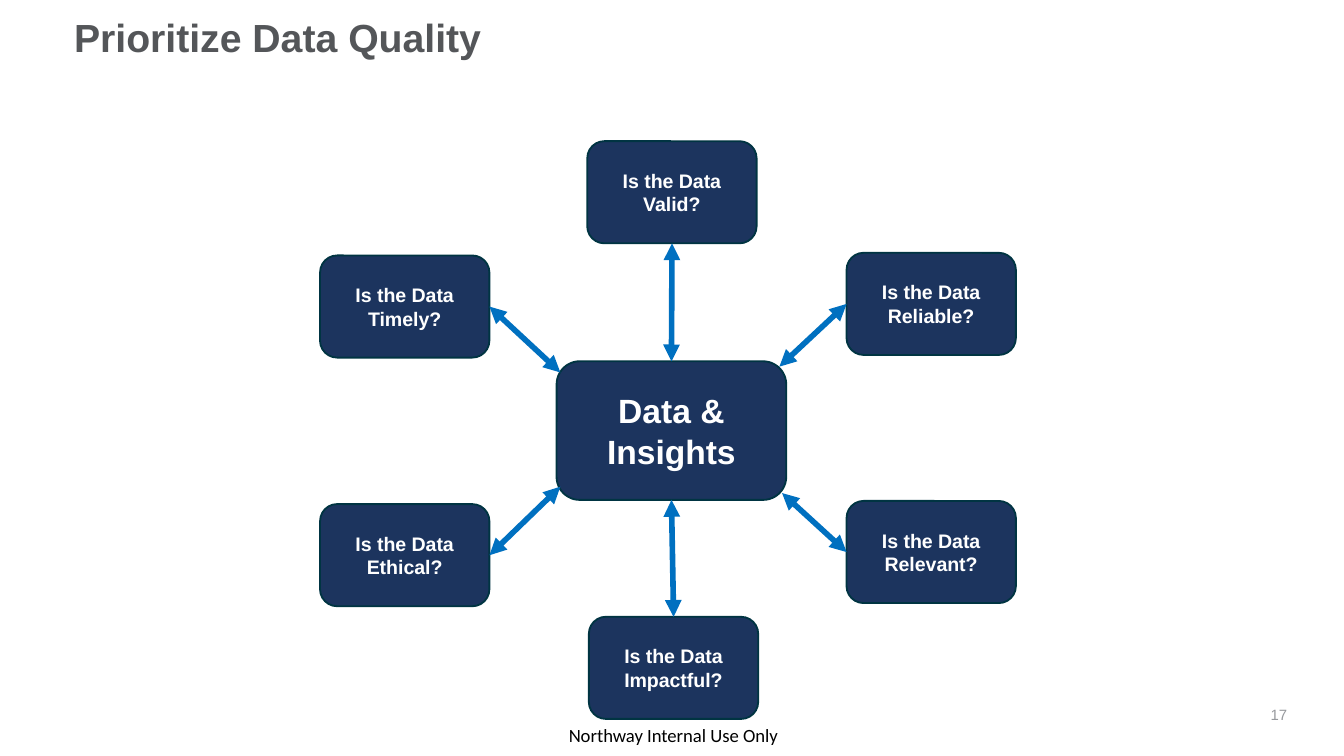
from lxml import etree
from pptx import Presentation
from pptx.dml.color import RGBColor
from pptx.enum.shapes import MSO_CONNECTOR, MSO_SHAPE
from pptx.enum.text import MSO_ANCHOR, PP_ALIGN
from pptx.oxml.ns import qn
from pptx.util import Cm, Pt

ROUNDED, STRAIGHT = MSO_SHAPE.ROUNDED_RECTANGLE, MSO_CONNECTOR.STRAIGHT
TOP, MIDDLE = MSO_ANCHOR.TOP, MSO_ANCHOR.MIDDLE
LEFT, CENTER, RIGHT = PP_ALIGN.LEFT, PP_ALIGN.CENTER, PP_ALIGN.RIGHT
TOP_SIDE, LEFT_SIDE, BOTTOM_SIDE, RIGHT_SIDE = range(4)

# Content: all lengths in cm
NAVY, EDGE, ARROW, WHITE = "1C345E", "003442", "0070C0", "FFFFFF"
HUB = ("Data & Insights", (10.52, 6.83, 4.34, 2.62))
QUESTION_SIZE = (3.2, 1.93)
# Quality, left and top of its box, side the arrow meets,
# and where the arrow meets the hub (a side, or a point near a corner)
QUESTIONS = [
    ("Valid", (11.1, 2.67), BOTTOM_SIDE, TOP_SIDE),
    ("Reliable", (16, 4.78), LEFT_SIDE, (14.73, 6.93)),
    ("Relevant", (16, 9.47), LEFT_SIDE, (14.78, 9.32)),
    ("Timely", (6.05, 4.83), RIGHT_SIDE, (10.59, 7.04)),
    ("Ethical", (6.05, 9.53), RIGHT_SIDE, (10.59, 9.2)),
    ("Impactful", (11.13, 11.66), TOP_SIDE, BOTTOM_SIDE),
]
# Text, box, vertical inset, line spacing, wrap, alignment, font
LABELS = [
    ("Northway Internal Use Only", (10.72, 13.69, 4.01, 0.43), 0, 1, False, CENTER,
     {"size": Pt(10), "name": "Calibri"}, "000000"),
    ("17", (23.85, 13.21, 0.48, 0.66), 0.13, 1, False, RIGHT,
     {"size": Pt(8), "name": "Arial"}, "97999D"),
    ("Prioritize Data Quality", (1.4, 0.23, 23.67, 1.42), 0.13, 0.9, True, LEFT,
     {"size": Pt(21), "name": "Arial", "bold": True}, "545659"),
]


def rgb(color):
    return RGBColor.from_string(color)


def write(frame, text, frame_format, paragraph_format, font_format, color):
    paragraph = frame.paragraphs[0]
    run = paragraph.add_run()
    run.text = text
    for target, values in ((frame, frame_format), (paragraph, paragraph_format),
                           (run.font, font_format)):
        for attribute, value in values.items():
            setattr(target, attribute, value)
    run.font.color.rgb = rgb(color)


def add_box(slide, text, box, size):
    node = slide.shapes.add_shape(ROUNDED, *map(Cm, box))
    node.shadow.inherit = False
    node.fill.solid()
    node.fill.fore_color.rgb = rgb(NAVY)
    node.line.color.rgb = rgb(EDGE)
    node.line.width = Pt(1)
    write(node.text_frame, text, {"word_wrap": True, "vertical_anchor": MIDDLE},
          {"alignment": CENTER}, {"size": Pt(size), "name": "Arial", "bold": True}, WHITE)
    return node


def add_arrow(slide, hub, hub_end, question, side):
    start = (0, 0) if isinstance(hub_end, int) else map(Cm, hub_end)
    arrow = slide.shapes.add_connector(STRAIGHT, *start, 0, 0)
    if isinstance(hub_end, int):
        arrow.begin_connect(hub, hub_end)
    arrow.end_connect(question, side)
    arrow.line.color.rgb = rgb(ARROW)
    arrow.line.width = Pt(3)
    line = arrow.line._get_or_add_ln()
    for end in ("a:headEnd", "a:tailEnd"):
        etree.SubElement(line, qn(end), type="triangle")
    etree.SubElement(arrow._element.spPr, qn("a:effectLst"))


def main():
    deck = Presentation()
    deck.slide_width, deck.slide_height = Cm(25.4), Cm(14.29)
    slide = deck.slides.add_slide(deck.slide_layouts[6])

    # Footer, page number and title
    for text, box, inset, spacing, wrap, alignment, font, color in LABELS:
        frame = slide.shapes.add_textbox(*map(Cm, box)).text_frame
        write(frame, text,
              {"margin_left": 0, "margin_right": 0, "margin_top": Cm(inset),
               "margin_bottom": Cm(inset), "word_wrap": wrap, "vertical_anchor": TOP},
              {"alignment": alignment, "line_spacing": spacing}, font, color)

    # Hub and the questions around it
    hub = add_box(slide, *HUB, 18)
    questions = [add_box(slide, f"Is the Data {quality}?", corner + QUESTION_SIZE, 10.5)
                 for quality, corner, _, _ in QUESTIONS]

    # Two-headed arrows between hub and questions
    for question, (_, _, side, hub_end) in zip(questions, QUESTIONS):
        add_arrow(slide, hub, hub_end, question, side)

    deck.save("out.pptx")


if __name__ == "__main__":
    main()
